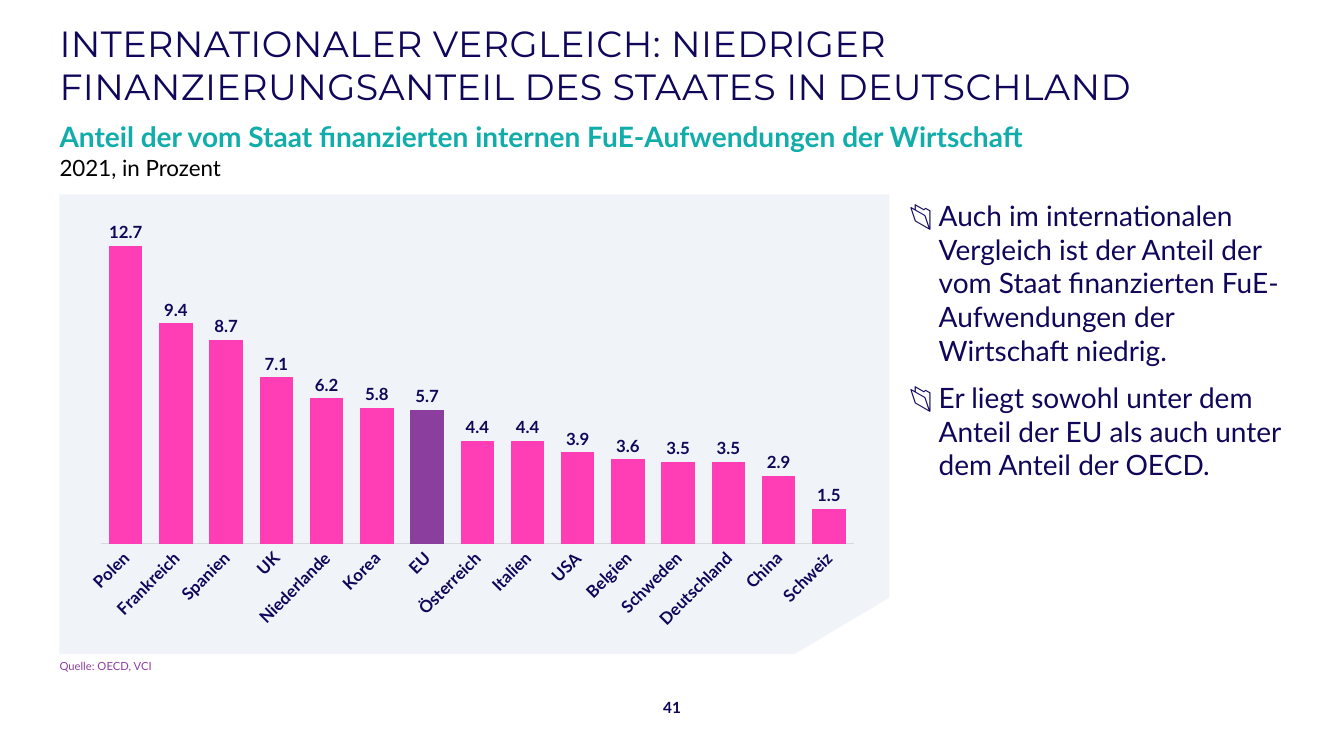
from pptx import Presentation
from pptx.chart.data import CategoryChartData
from pptx.dml.color import RGBColor
from pptx.enum.chart import XL_CHART_TYPE, XL_LABEL_POSITION, XL_TICK_MARK
from pptx.enum.text import MSO_ANCHOR, MSO_AUTO_SIZE, PP_ALIGN
from pptx.util import Inches, Pt
from lxml.etree import SubElement
from pptx.oxml import parse_xml
from pptx.oxml.ns import nsdecls, qn

NAVY = RGBColor(0x10, 0x06, 0x5A)
TEAL = RGBColor(0x10, 0xAD, 0xAA)
PINK = RGBColor(0xFF, 0x3E, 0xB5)
PLUM = RGBColor(0x8C, 0x3E, 0x9F)
BLACK = RGBColor(0, 0, 0)
GREY = RGBColor(0xD9, 0xD9, 0xD9)
PALE = RGBColor(0xF0, 0xF3, 0xF7)

# Grid lines in inches
LEFT, RIGHT = 0.59, 12.79
TOP, BASE = 1.93, 6.49
EDGE = 8.82
SIDE = EDGE + 0.2
FULL = RIGHT - LEFT


def style(font, size, color, bold=False, name="Lato"):
    font.name, font.size, font.bold = name, Pt(size), bold
    font.color.rgb = color


def write(shape, box, lines, look, pad=0, anchor=MSO_ANCHOR.TOP,
          align=PP_ALIGN.LEFT, bullet=None):
    shape.left, shape.top, shape.width, shape.height = map(Inches, box)
    frame = shape.text_frame
    frame.text = "\n".join(lines)
    frame.word_wrap = True
    frame.auto_size = MSO_AUTO_SIZE.NONE
    frame.vertical_anchor = anchor
    frame.margin_left = frame.margin_right = 0
    frame.margin_top = frame.margin_bottom = Inches(pad)
    for i, para in enumerate(frame.paragraphs):
        para.alignment = align
        para.space_before = Pt(10 if i else 0)
        props = para._p.get_or_add_pPr()
        hang = Inches(0.29) if bullet else 0
        props.set("marL", str(hang))
        props.set("indent", str(-hang))
        if bullet:
            tint = SubElement(props, qn("a:buClr"))
            SubElement(tint, qn("a:srgbClr")).set("val", str(NAVY))
            SubElement(props, qn("a:buChar")).set("char", bullet)
        else:
            SubElement(props, qn("a:buNone"))
        style(para.font, *look)


deck = Presentation()
deck.slide_width, deck.slide_height = Inches(13.33), Inches(7.5)
slide = deck.slides.add_slide(deck.slide_layouts[4])
shapes = slide.shapes
title, head, points, unit, source = slide.placeholders

# Title and texts
write(title, (LEFT, 0.15, FULL, 0.98),
      ["INTERNATIONALER VERGLEICH: NIEDRIGER FINANZIERUNGSANTEIL "
       "DES STAATES IN DEUTSCHLAND"],
      (26, NAVY, False, "Montserrat"), 0.04, MSO_ANCHOR.MIDDLE)
title.text_frame.paragraphs[0].runs[0]._r.get_or_add_rPr().set("spc", "30")
write(head, (LEFT, 1.19, FULL, 0.31),
      ["Anteil der vom Staat finanzierten internen FuE-Aufwendungen "
       "der Wirtschaft"], (20, TEAL, True))
write(unit, (LEFT, 1.53, FULL, 0.28), ["2021, in Prozent"], (16, BLACK))
write(points, (SIDE, TOP, RIGHT - SIDE, 4.41),
      ["Auch im internationalen Vergleich ist der Anteil der vom Staat "
       "finanzierten FuE-Aufwendungen der Wirtschaft niedrig.",
       "Er liegt sowohl unter dem Anteil der EU als auch unter dem Anteil "
       "der OECD."], (20, NAVY), 0.04, bullet="📂")
write(source, (LEFT, 6.54, 11.02, 0.13), ["Quelle: OECD, VCI"], (8, PLUM))

# Panel with a cut corner
rim = [(EDGE, TOP), (EDGE, 5.93), (7.88, BASE), (LEFT, BASE)]
pen = shapes.build_freeform(Inches(LEFT), Inches(TOP))
pen.add_line_segments([(Inches(x), Inches(y)) for x, y in rim])
panel = pen.convert_to_shape()
panel.shadow.inherit = False
panel.fill.solid()
panel.fill.fore_color.rgb = PALE
panel.line.fill.background()

# Page number
page = shapes.add_textbox(0, 0, 0, 0)
write(page, (6.37, 6.88, 0.59, 0.28), ["41"], (11, NAVY, True),
      anchor=MSO_ANCHOR.MIDDLE, align=PP_ALIGN.CENTER)

# Column chart
shares = {
    "Polen": 12.7, "Frankreich": 9.4, "Spanien": 8.7, "UK": 7.1,
    "Niederlande": 6.2, "Korea": 5.8, "EU": 5.7, "Österreich": 4.4,
    "Italien": 4.4, "USA": 3.9, "Belgien": 3.6, "Schweden": 3.5,
    "Deutschland": 3.5, "China": 2.9, "Schweiz": 1.5,
}
data = CategoryChartData(number_format="0.0")
data.categories = list(shares)
data.add_series("Series 1", list(shares.values()))
chart = shapes.add_chart(
    XL_CHART_TYPE.COLUMN_CLUSTERED, Inches(0.68), Inches(2.05),
    Inches(7.95), Inches(4.29), data).chart
chart.has_legend = chart.has_title = False
style(chart.font, 12, NAVY, True)

plot = chart.plots[0]
plot.gap_width, plot.overlap = 50, -27
plot.vary_by_categories = False
bars = plot.series[0]
bars.format.fill.solid()
bars.format.fill.fore_color.rgb = PINK
accent = bars.points[list(shares).index("EU")].format.fill
accent.solid()
accent.fore_color.rgb = PLUM

labels = bars.data_labels
labels.show_value = True
labels.position = XL_LABEL_POSITION.OUTSIDE_END
labels.number_format, labels.number_format_is_linked = "#,##0.0", False
style(labels.font, 12, NAVY, True)

# Axes
scale = chart.value_axis
scale.visible = scale.has_major_gridlines = False
scale.minimum_scale, scale.maximum_scale = 0, 14
names = chart.category_axis
names.major_tick_mark = names.minor_tick_mark = XL_TICK_MARK.NONE
names.format.line.color.rgb = GREY
names.format.line.width = Pt(0.75)
style(names.tick_labels.font, 12, NAVY, True)
names._element.find(qn("c:txPr")).find(qn("a:bodyPr")).set("rot", "-2700000")

# Plot area as shares of the chart
area = chart._chartSpace.chart.plotArea
for old in area.findall(qn("c:layout")):
    area.remove(old)
parts = {"layoutTarget": "inner", "xMode": "edge", "yMode": "edge",
         "x": 0.04, "y": 0.02, "w": 0.94, "h": 0.76}
inner = "".join(f'<c:{k} val="{v}"/>' for k, v in parts.items())
area.insert(0, parse_xml(
    f'<c:layout {nsdecls("c")}><c:manualLayout>{inner}'
    '</c:manualLayout></c:layout>'))

deck.save("out.pptx")
